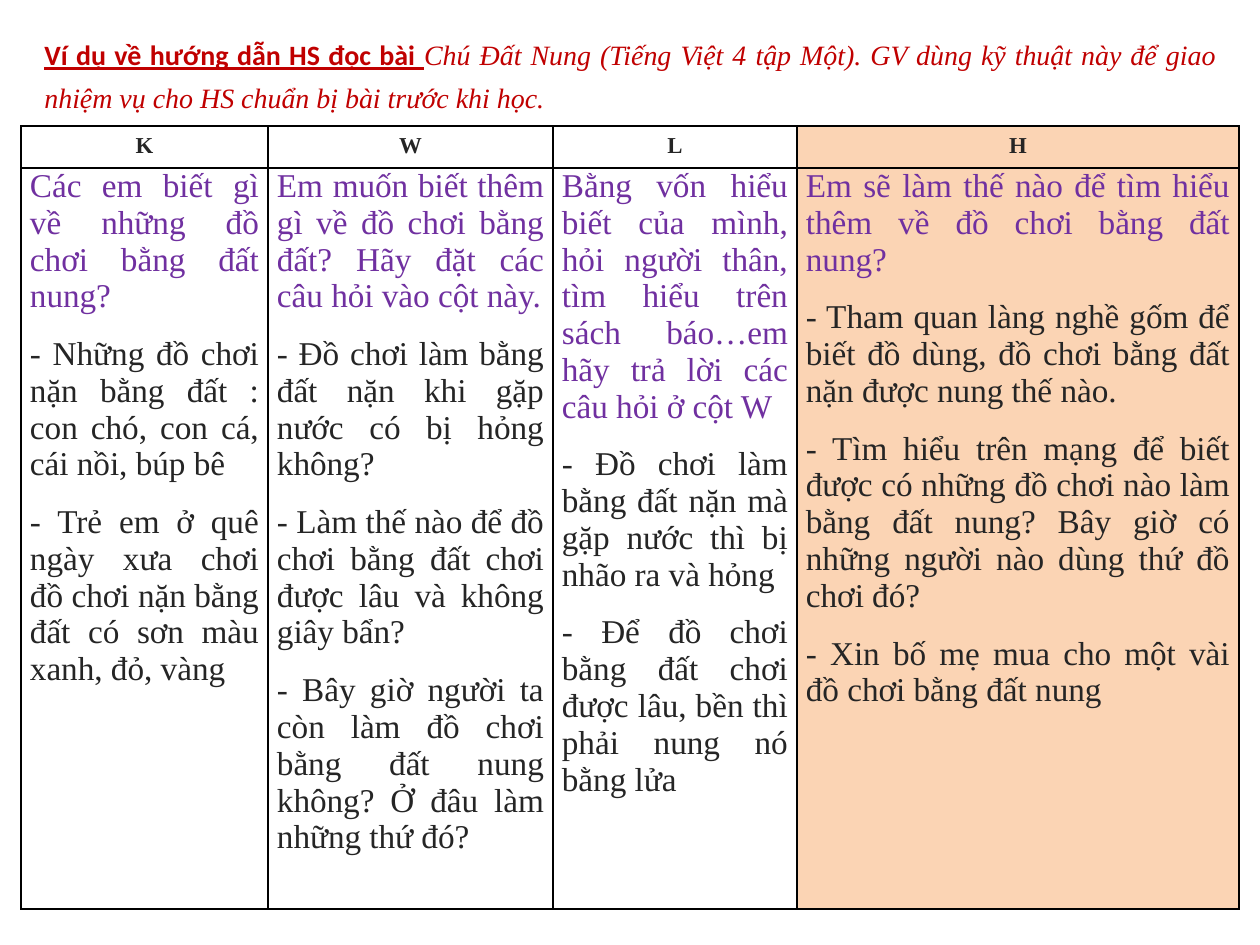
from lxml.etree import SubElement
from pptx import Presentation
from pptx.dml.color import RGBColor
from pptx.enum.text import PP_ALIGN as Align
from pptx.oxml.ns import qn
from pptx.util import Pt

EMU_PER_PX = 914400 / 126
COLORS = {"title": "C00000", "question": "7030A0", "answer": "252525",
          "highlight": "FBD4B4", "border": "000000"}
SERIF, SANS = "Times New Roman", "Calibri"

COLUMN_WIDTHS = [247, 285, 244, 442]
HEADER_HEIGHT = 42
KWLH = {
    "K": ["Các em biết gì về những đồ chơi bằng đất nung?",
          "- Những đồ chơi nặn bằng đất : con chó, con cá, cái nồi, búp bê",
          "- Trẻ em ở quê ngày xưa chơi đồ chơi nặn bằng đất có sơn màu xanh, đỏ, vàng"],
    "W": ["Em muốn biết thêm gì về đồ chơi bằng đất? Hãy đặt các câu hỏi vào cột này.",
          "- Đồ chơi làm bằng đất nặn khi gặp nước có bị hỏng không?",
          "- Làm thế nào để đồ chơi bằng đất chơi được lâu và không giây bẩn?",
          "- Bây giờ người ta còn làm đồ chơi bằng đất nung không? Ở đâu làm những thứ đó?"],
    "L": ["Bằng vốn hiểu biết của mình, hỏi người thân, tìm hiểu trên sách báo…em hãy trả lời "
          "các câu hỏi ở cột W",
          "- Đồ chơi làm bằng đất nặn mà gặp nước thì bị nhão ra và hỏng",
          "- Để đồ chơi bằng đất chơi được lâu, bền thì phải nung nó bằng lửa"],
    "H": ["Em sẽ làm thế nào để tìm hiểu thêm về đồ chơi bằng đất nung?",
          "- Tham quan làng nghề gốm để biết đồ dùng, đồ chơi bằng đất nặn được nung thế nào.",
          "- Tìm hiểu trên mạng để biết được có những đồ chơi nào làm bằng đất nung? "
          "Bây giờ có những người nào dùng thứ đồ chơi đó?",
          "- Xin bố mẹ mua cho một vài đồ chơi bằng đất nung"],
}


def px(length):
    return round(length * EMU_PER_PX)


def format_paragraph(paragraph, align, line_spacing=None):
    paragraph.alignment = align
    paragraph.line_spacing = line_spacing
    paragraph.space_before = paragraph.space_after = Pt(6)


def add_run(paragraph, text, size, color, face=SERIF, bold=False, italic=False, underline=False):
    run = paragraph.add_run()
    run.text = text
    font = run.font
    font.name, font.size = face, Pt(size)
    font.bold, font.italic, font.underline = bold, italic, underline
    font.color.rgb = RGBColor.from_string(COLORS[color])


def style_cell(cell, highlighted):
    """Set the margins, the black grid lines and the fill of a cell."""
    cell.margin_left = cell.margin_right = px(9)
    cell.margin_top = cell.margin_bottom = 0
    properties = cell._tc.get_or_add_tcPr()
    for side in ("a:lnL", "a:lnR", "a:lnT", "a:lnB"):
        line = SubElement(properties, qn(side), w=str(Pt(1)))
        fill = SubElement(line, qn("a:solidFill"))
        SubElement(fill, qn("a:srgbClr"), val=COLORS["border"])
    if highlighted:
        cell.fill.solid()
        cell.fill.fore_color.rgb = RGBColor.from_string(COLORS["highlight"])
    else:
        cell.fill.background()


def add_intro(slide, left, top, width, height):
    frame = slide.shapes.add_textbox(px(left), px(top), px(width), px(height)).text_frame
    frame.word_wrap = True
    intro = frame.paragraphs[0]
    format_paragraph(intro, Align.JUSTIFY, 1.3)
    add_run(intro, "Ví dụ về hướng dẫn HS đọc bài ", 16, "title", SANS, bold=True, underline=True)
    add_run(intro, "Chú Đất Nung (Tiếng Việt 4 tập Một). GV dùng kỹ thuật này để giao "
            "nhiệm vụ cho HS chuẩn bị bài trước khi học.", 16, "title", italic=True)


def add_kwlh_table(slide, left, top, height):
    table = slide.shapes.add_table(2, len(KWLH), px(left), px(top),
                                   px(sum(COLUMN_WIDTHS)), px(height)).table
    table.first_row = table.horz_banding = False
    table.rows[0].height = px(HEADER_HEIGHT)
    table.rows[1].height = px(height - HEADER_HEIGHT)

    for index, (letter, entries) in enumerate(KWLH.items()):
        table.columns[index].width = px(COLUMN_WIDTHS[index])
        header, body = table.cell(0, index), table.cell(1, index)
        for cell in (header, body):
            style_cell(cell, highlighted=letter == "H")

        heading = header.text_frame.paragraphs[0]
        format_paragraph(heading, Align.CENTER, 1.3)
        add_run(heading, letter, 13, "answer", bold=True)

        frame = body.text_frame
        for order, entry in enumerate(entries):
            paragraph = frame.add_paragraph() if order else frame.paragraphs[0]
            format_paragraph(paragraph, Align.JUSTIFY)
            add_run(paragraph, entry, 19, "answer" if order else "question")


def main():
    deck = Presentation()
    deck.slide_width, deck.slide_height = px(1260), px(945)
    slide = deck.slides.add_slide(deck.slide_layouts[6])
    add_intro(slide, 32, 21, 1197, 903)
    add_kwlh_table(slide, 21, 126, 751)
    deck.save("out.pptx")


if __name__ == "__main__":
    main()
